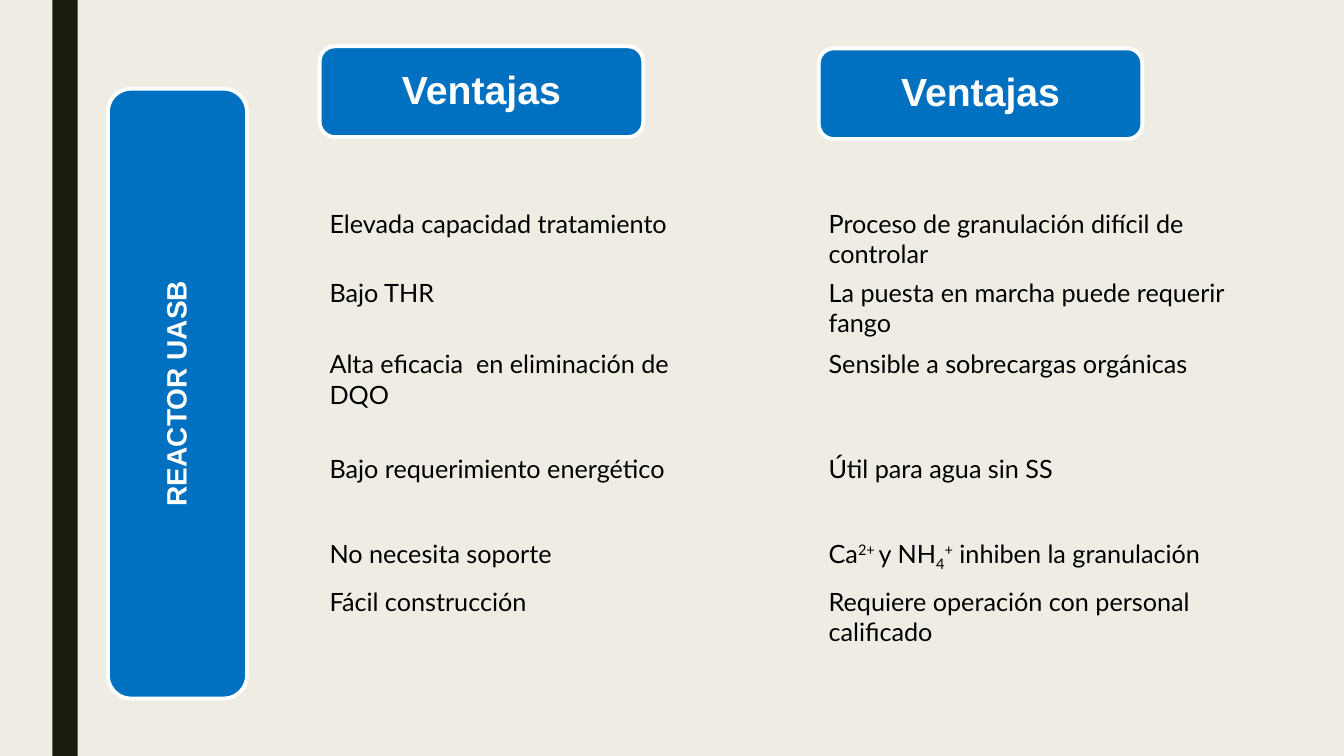
import pptx
import pptx.dml.color
import pptx.enum.shapes
import pptx.enum.text
import pptx.util
from pptx.util import Inches

BACKGROUND, BAR, BLUE, WHITE, BLACK = "EFEDE3", "191B0E", "0070C0", "FFFFFF", "000000"
SUPERSCRIPT, SUBSCRIPT = "30000", "-25000"

REACTOR = "REACTOR UASB"
ROW_TOPS = [2.02, 2.7, 3.41, 4.45, 5.29, 5.77]
# Each statement is a list of (text, baseline shift) runs.
COLUMNS = [
    {
        "heading": "Ventajas", "left": 3.17, "heading_top": 0.46, "width": 3.62,
        "statements": [
            [("Elevada capacidad tratamiento", None)],
            [("Bajo THR", None)],
            [("Alta eficacia  en eliminación de DQO", None)],
            [("Bajo requerimiento energético", None)],
            [("No necesita soporte", None)],
            [("Fácil construcción", None)],
        ],
    },
    {
        "heading": "Ventajas", "left": 8.12, "heading_top": 0.48, "width": 4.31,
        "statements": [
            [("Proceso de granulación difícil de controlar", None)],
            [("La puesta en marcha puede requerir fango", None)],
            [("Sensible a sobrecargas orgánicas", None)],
            [("Útil para agua sin SS", None)],
            [("Ca", None), ("2+ ", SUPERSCRIPT), ("y NH", None), ("4", SUBSCRIPT),
             ("+", SUPERSCRIPT), (" inhiben la granulación", None)],
            [("Requiere operación con personal calificado", None)],
        ],
    },
]


def color(hex_value):
    return pptx.dml.color.RGBColor.from_string(hex_value)


def style(font, name, size, hex_value, bold=False):
    font.name, font.size, font.bold = name, pptx.util.Pt(size), bold
    font.color.rgb = color(hex_value)


def add_block(slide, kind, box, fill):
    block = slide.shapes.add_shape(kind, *map(Inches, box))
    block.shadow.inherit = False
    block.fill.solid()
    block.fill.fore_color.rgb = color(fill)
    block.line.fill.background()
    return block


def add_label(slide, box, text, size):
    """Add a blue rounded block with a white outline and a bold centred label."""
    label = add_block(slide, pptx.enum.shapes.MSO_SHAPE.ROUNDED_RECTANGLE, box, BLUE)
    label.line.color.rgb = color(WHITE)
    label.line.width = pptx.util.Pt(2.75)
    frame = label.text_frame
    frame.text = text
    frame.word_wrap = True
    frame.vertical_anchor = pptx.enum.text.MSO_ANCHOR.MIDDLE
    paragraph = frame.paragraphs[0]
    paragraph.alignment = pptx.enum.text.PP_ALIGN.CENTER
    paragraph.line_spacing = 0.9
    style(paragraph.runs[0].font, "Arial", size, WHITE, bold=True)
    return label


def add_statement(slide, box, runs):
    statement = slide.shapes.add_textbox(*map(Inches, box))
    frame = statement.text_frame
    frame.word_wrap = True
    for text, baseline in runs:
        run = frame.paragraphs[0].add_run()
        run.text = text
        style(run.font, "Lato", 18, BLACK)
        if baseline:
            run.font._element.set("baseline", baseline)


def main():
    deck = pptx.Presentation()
    deck.slide_width, deck.slide_height = Inches(13.33), Inches(7.5)
    slide = deck.slides.add_slide(deck.slide_layouts[6])
    slide.background.fill.solid()
    slide.background.fill.fore_color.rgb = color(BACKGROUND)

    add_block(slide, pptx.enum.shapes.MSO_SHAPE.RECTANGLE, (0.52, 0, 0.25, 7.5), BAR)
    reactor = add_label(slide, (1.07, 0.88, 1.38, 6.05), REACTOR, 20)
    reactor.text_frame._txBody.bodyPr.set("vert", "vert270")

    for column in COLUMNS:
        left = column["left"]
        add_label(slide, (left, column["heading_top"], 3.21, 0.9), column["heading"], 28)
        for top, runs in zip(ROW_TOPS, column["statements"]):
            add_statement(slide, (left, top, column["width"], 0.4), runs)

    deck.save("out.pptx")


if __name__ == "__main__":
    main()
